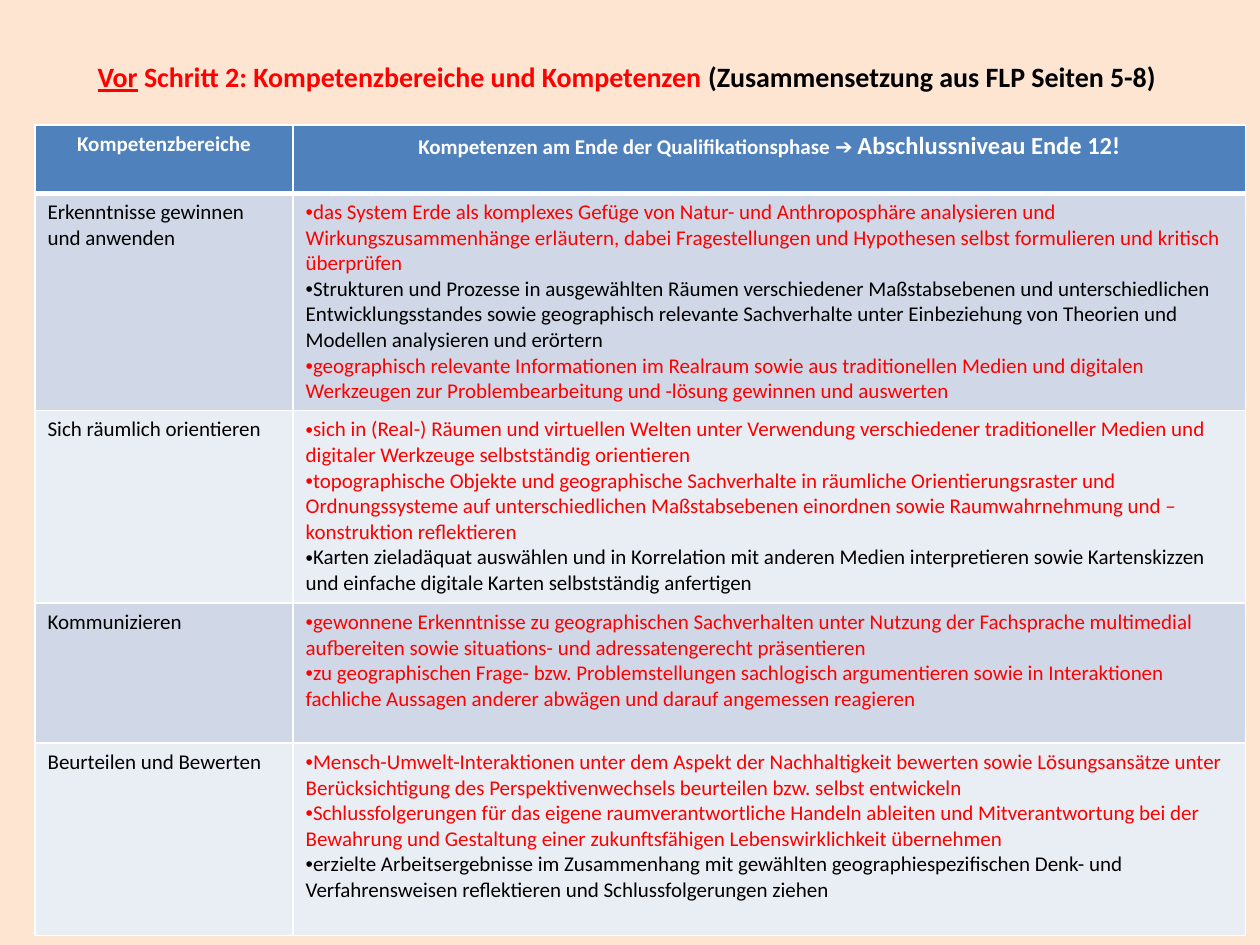
from lxml.etree import SubElement
from pptx import Presentation
from pptx.dml.color import RGBColor
from pptx.enum.text import MSO_ANCHOR as Anchor, MSO_AUTO_SIZE as AutoSize, PP_ALIGN as Align
from pptx.oxml.ns import qn
from pptx.util import Pt

# Content: (text, style) runs; True marks a competence highlighted in red
TITLE = [
    ("Vor", "underlined"),
    (" Schritt 2: Kompetenzbereiche und Kompetenzen ", "accent"),
    ("(Zusammensetzung aus FLP Seiten 5-8) ", "text"),
]
HEADER = [
    [("Kompetenzbereiche", "body")],
    [("Kompetenzen am Ende der Qualifikationsphase ➔ ", "body"),
     ("Abschlussniveau Ende 12!", "large")],
]
AREAS = [
    ("Erkenntnisse gewinnen und anwenden", [
        ("das System Erde als komplexes Gefüge von Natur- und Anthroposphäre analysieren und "
         "Wirkungszusammenhänge erläutern, dabei Fragestellungen und Hypothesen selbst "
         "formulieren und kritisch überprüfen", True),
        ("Strukturen und Prozesse in ausgewählten Räumen verschiedener Maßstabsebenen und "
         "unterschiedlichen Entwicklungsstandes sowie geographisch relevante Sachverhalte unter "
         "Einbeziehung von Theorien und Modellen analysieren und erörtern", False),
        ("geographisch relevante Informationen im Realraum sowie aus traditionellen Medien und "
         "digitalen Werkzeugen zur Problembearbeitung und -lösung gewinnen und auswerten", True),
    ]),
    ("Sich räumlich orientieren", [
        ("sich in (Real-) Räumen und virtuellen Welten unter Verwendung verschiedener "
         "traditioneller Medien und digitaler Werkzeuge selbstständig orientieren", True),
        ("topographische Objekte und geographische Sachverhalte in räumliche Orientierungsraster "
         "und Ordnungssysteme auf unterschiedlichen Maßstabsebenen einordnen sowie "
         "Raumwahrnehmung und –konstruktion reflektieren", True),
        ("Karten zieladäquat auswählen und in Korrelation mit anderen Medien interpretieren sowie "
         "Kartenskizzen und einfache digitale Karten selbstständig anfertigen", False),
    ]),
    ("Kommunizieren", [
        ("gewonnene Erkenntnisse zu geographischen Sachverhalten unter Nutzung der Fachsprache "
         "multimedial aufbereiten sowie situations- und adressatengerecht präsentieren", True),
        ("zu geographischen Frage- bzw. Problemstellungen sachlogisch argumentieren sowie in "
         "Interaktionen fachliche Aussagen anderer abwägen und darauf angemessen reagieren", True),
    ]),
    ("Beurteilen und Bewerten", [
        ("Mensch-Umwelt-Interaktionen unter dem Aspekt der Nachhaltigkeit bewerten sowie "
         "Lösungsansätze unter Berücksichtigung des Perspektivenwechsels beurteilen bzw. selbst "
         "entwickeln", True),
        ("Schlussfolgerungen für das eigene raumverantwortliche Handeln ableiten und "
         "Mitverantwortung bei der Bewahrung und Gestaltung einer zukunftsfähigen "
         "Lebenswirklichkeit übernehmen", True),
        ("erzielte Arbeitsergebnisse im Zusammenhang mit gewählten geographiespezifischen Denk- "
         "und Verfahrensweisen reflektieren und Schlussfolgerungen ziehen", False),
    ]),
]

THEME = {
    "font": "Calibri",
    "title": 16, "large": 14, "body": 12,
    "background": "FCD5B5", "background_alpha": 60,
    "accent": "FF0000", "text": "000000", "white": "FFFFFF",
    "header": "4F81BD", "bands": ("D0D8E8", "E9EDF4"),
}

# Layout in points
SLIDE_SIZE = (720, 540)
TITLE_BOX = (36, 21.6, 648, 44)
TABLE_ORIGIN = (20, 71.5)
COLUMNS = (147.5, 544.3)
ROWS = (39, 124, 110, 80, 110)


def rgb(key):
    return RGBColor.from_string(THEME.get(key, key))


def style(run, size, color, bold=False):
    run.font.name = THEME["font"]
    run.font.size = Pt(THEME[size])
    run.font.bold = bold
    run.font.color.rgb = rgb(color)


def add_run(paragraph, text, size, color, bold=False):
    run = paragraph.add_run()
    run.text = text
    style(run, size, color, bold)
    return run


def add_bullet(paragraph):
    props = paragraph._p.get_or_add_pPr()
    props.set("marL", "0")
    props.set("indent", "0")
    SubElement(props, qn("a:buFont"), typeface="Arial")
    SubElement(props, qn("a:buChar"), char="•")


def format_cell(cell, fill, bottom=1):
    props = cell._tc.get_or_add_tcPr()
    for side, width in (("L", 1), ("R", 1), ("T", 1), ("B", bottom)):
        line = SubElement(props, qn(f"a:ln{side}"), w=str(Pt(width)))
        solid = SubElement(line, qn("a:solidFill"))
        SubElement(solid, qn("a:srgbClr"), val=THEME["white"])
    cell.fill.solid()
    cell.fill.fore_color.rgb = rgb(fill)


def add_title(slide):
    title = slide.shapes.title
    title.left, title.top, title.width, title.height = map(Pt, TITLE_BOX)
    frame = title.text_frame
    frame.word_wrap = True
    frame.auto_size = AutoSize.NONE
    frame.vertical_anchor = Anchor.MIDDLE
    heading = frame.paragraphs[0]
    heading.alignment = Align.CENTER
    for text, kind in TITLE:
        color = "text" if kind == "text" else "accent"
        run = add_run(heading, text, "title", color, bold=True)
        run.font.underline = kind == "underlined"


def add_competence_table(slide):
    table = slide.shapes.add_table(
        len(ROWS), len(COLUMNS), *map(Pt, TABLE_ORIGIN), Pt(sum(COLUMNS)), Pt(sum(ROWS))).table
    for column, width in zip(table.columns, COLUMNS):
        column.width = Pt(width)
    for row, height in zip(table.rows, ROWS):
        row.height = Pt(height)

    # Header row
    for cell, runs in zip(table.rows[0].cells, HEADER):
        format_cell(cell, "header", bottom=3)
        label = cell.text_frame.paragraphs[0]
        label.alignment = Align.CENTER
        for text, size in runs:
            add_run(label, text, size, "white", bold=True)

    # One banded row per area
    for index, (area, competences) in enumerate(AREAS):
        area_cell, list_cell = table.rows[index + 1].cells
        for cell in (area_cell, list_cell):
            format_cell(cell, THEME["bands"][index % 2])
        add_run(area_cell.text_frame.paragraphs[0], area, "body", "text")
        list_cell.text_frame.text = "\n".join(text for text, _ in competences)
        for paragraph, (_, highlighted) in zip(list_cell.text_frame.paragraphs, competences):
            add_bullet(paragraph)
            style(paragraph.runs[0], "body", "accent" if highlighted else "text")


def main():
    deck = Presentation()
    deck.slide_width, deck.slide_height = map(Pt, SLIDE_SIZE)
    slide = deck.slides.add_slide(deck.slide_layouts[5])

    # Translucent background
    fill = slide.background.fill
    fill.solid()
    fill.fore_color.rgb = rgb("background")
    tint = slide.background._cSld.find(".//" + qn("a:srgbClr"))
    SubElement(tint, qn("a:alpha"), val=str(THEME["background_alpha"] * 1000))

    add_title(slide)
    add_competence_table(slide)
    deck.save("out.pptx")


if __name__ == "__main__":
    main()
